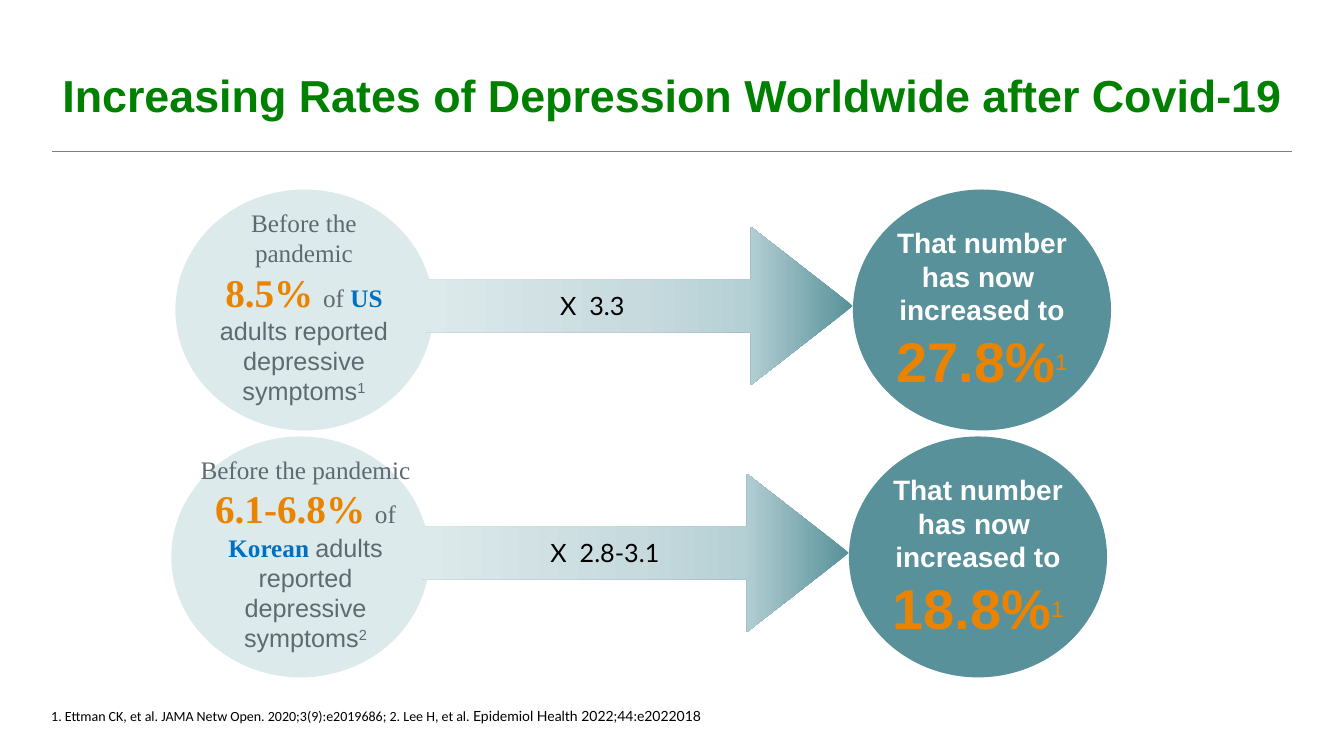
from lxml.etree import SubElement
from pptx import Presentation
from pptx.dml.color import RGBColor
from pptx.enum.shapes import MSO_CONNECTOR, MSO_SHAPE
from pptx.enum.text import MSO_ANCHOR, PP_ALIGN
from pptx.oxml.ns import qn
from pptx.util import Inches, Pt

COLORS = {
    "green": "008000", "rule": "7F7F7F", "black": "000000", "white": "FFFFFF",
    "teal": "589199", "pale": "DDEAEB", "mist": "B5D0D5", "haze": "C7DADE",
    "slate": "5E6A71", "orange": "E98300", "blue": "0070C0",
}
SERIF, SANS = "Times New Roman", "Arial"
FORMATS = {
    "title": {"name": SANS, "size": Pt(32), "bold": True, "color": "green"},
    "intro": {"name": SERIF, "size": Pt(18), "bold": False, "color": "slate"},
    "rate": {"name": SERIF, "size": Pt(28), "bold": True, "color": "orange"},
    "place": {"name": SERIF, "size": Pt(18), "bold": True, "color": "blue"},
    "body": {"name": SANS, "size": Pt(18), "bold": False, "color": "slate"},
    "now": {"name": SANS, "size": Pt(20), "bold": True, "color": "white"},
    "big": {"name": SANS, "size": Pt(40), "bold": True, "color": "orange"},
    "mark": {"name": SANS, "size": Pt(28), "bold": False, "color": "orange"},
    "factor": {"name": "Lato", "size": Pt(18), "bold": False, "color": "black"},
    "cite": {"name": "Calibri", "size": Pt(10), "bold": False, "color": "black"},
    "cite2": {"name": "Lato", "size": Pt(10), "bold": False, "color": "black"},
}
STOPS = [(0, "teal"), (25, "mist"), (50, "haze"), (100, "pale")]
ROWS = [
    (0, 0, "8.5% ", "US ", "1", 2.21, "27.8%", "X  3.3", 5.4, 0.95),
    (-0.04, 2.45, "6.1-6.8% ", "Korean ", "2", 2.32, "18.8%", "X  2.8-3.1", 5.33, 1.34),
]


def add_text(shapes, area, pieces, align=PP_ALIGN.CENTER):
    box = shapes.add_textbox(*map(Inches, area))
    box.text_frame.word_wrap = True
    para = box.text_frame.paragraphs[0]
    para.alignment = align
    for text, style, *base in pieces:
        for i, line in enumerate(text.split("\n")):
            if i:
                para.add_line_break()
            if not line:
                continue
            run = para.add_run()
            run.text = line
            for key, value in FORMATS[style].items():
                if key == "color":
                    run.font.color.rgb = RGBColor.from_string(COLORS[value])
                else:
                    setattr(run.font, key, value)
            if base:
                run.font._element.set("baseline", "30000")
    return box.text_frame


def add_form(shapes, kind, area, color):
    form = shapes.add_shape(kind, *map(Inches, area))
    form.shadow.inherit = False
    form.line.fill.background()
    form.fill.solid()
    form.fill.fore_color.rgb = RGBColor.from_string(COLORS[color])
    return form


deck = Presentation()
deck.slide_width, deck.slide_height = Inches(13.33), Inches(7.5)
slide = deck.slides.add_slide(deck.slide_layouts[6])

rule = slide.shapes.add_connector(
    MSO_CONNECTOR.STRAIGHT, Inches(0.52), Inches(1.5), Inches(12.81), Inches(1.5))
rule.line.color.rgb = RGBColor.from_string(COLORS["rule"])
rule.line.width = Pt(1)
SubElement(rule._element.spPr, qn("a:effectLst"))

title = add_text(slide.shapes, (0.52, 0.53, 12.48, 0.92),
                 [("Increasing Rates of Depression Worldwide after Covid-19", "title")],
                 PP_ALIGN.LEFT)
title.vertical_anchor = MSO_ANCHOR.MIDDLE
title.paragraphs[0].line_spacing = 0.8

for dx, dy, rate, place, note, width, big, factor, left, span in ROWS:
    parts = slide.shapes.add_group_shape().shapes
    add_form(parts, MSO_SHAPE.OVAL, (8.46 + dx, 1.88 + dy, 2.56, 2.39), "teal")
    add_form(parts, MSO_SHAPE.OVAL, (1.74 + dx, 1.88 + dy, 2.56, 2.39), "pale")
    add_text(parts, (1.91 + dx, 2.01 + dy, width, 2.09), [
        ("Before the pandemic\n", "intro"), (rate, "rate"), ("of ", "intro"),
        (place, "place"), ("adults reported depressive symptoms", "body"),
        (note, "body", True)])
    add_text(parts, (8.76 + dx, 2.19 + dy, 1.96, 1.76), [
        ("That number has now \nincreased to ", "now"), (big, "big"),
        ("1", "mark", True)])

    arrow = add_form(parts, MSO_SHAPE.UP_ARROW,
                     (5.56 + dx, 0.92 + dy, 1.57, 4.23), "mist")
    arrow.rotation = 90
    arrow.adjustments[0], arrow.adjustments[1] = 0.332, 0.645
    arrow.fill.gradient()
    arrow.fill.gradient_angle = 270
    stops = arrow._element.spPr.find(".//" + qn("a:gsLst"))
    for old in list(stops):
        stops.remove(old)
    for share, color in STOPS:
        stop = SubElement(stops, qn("a:gs"), pos=str(share * 1000))
        SubElement(stop, qn("a:srgbClr"), val=COLORS[color])

    add_text(slide.shapes, (left, 2.83 + dy, span, 0.4), [(factor, "factor")])

add_text(slide.shapes, (0.41, 6.97, 8.43, 0.44), [
    ("1. Ettman CK, et al. JAMA Netw Open. 2020;3(9):e2019686; 2. Lee H, et al.", "cite"),
    (" Epidemiol Health 2022;44:e2022018", "cite2")], PP_ALIGN.LEFT)

deck.save("out.pptx")
